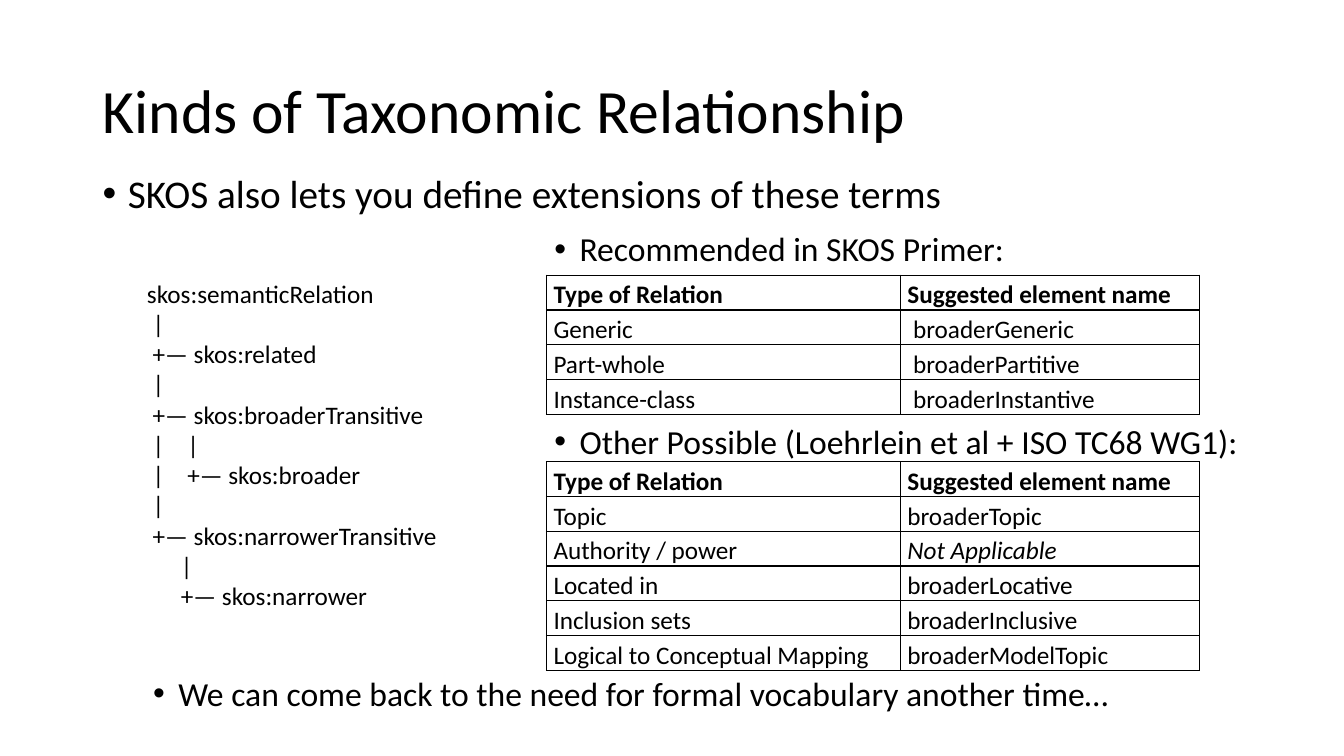
from dataclasses import dataclass
from lxml import etree
from pptx import Presentation, util as u
from pptx.dml.color import RGBColor
from pptx.enum import text as t
from pptx.oxml.ns import qn

PX = 9144
FONT = "Calibri"
COLORS = {"ink": "000000", "paper": "FFFFFF"}
HEAD = ("Type of Relation", "Suggested element name")


@dataclass
class Label:
    text: str
    x: int
    y: int
    w: int
    h: int
    size: int
    left: int = 0
    above: int = 0
    anchor: t.MSO_ANCHOR = t.MSO_ANCHOR.TOP


@dataclass
class Grid:
    y: int
    rows: list[tuple[str, str]]
    slant: str = ""


@dataclass
class Branch:
    text: str
    left: int = 0
    tab: int = 0


LABELS = [
    Label("Kinds of Taxonomic Relationship", 92, 40, 1150, 145, 44,
          anchor=t.MSO_ANCHOR.MIDDLE),
    Label("SKOS also lets you define extensions of these terms",
          92, 168, 901, 145, 28, 25, 10),
    Label("We can come back to the need for formal vocabulary another time…",
          92, 667, 1150, 87, 24, 75, 5),
    Label("Recommended in SKOS Primer:", 490, 226, 699, 47, 24, 75, 5),
    Label("Other Possible (Loehrlein et al + ISO TC68 WG1):",
          490, 417, 778, 47, 24, 75, 5),
]

GRIDS = [
    Grid(273, [
        HEAD,
        ("Generic", " broaderGeneric"),
        ("Part-whole", " broaderPartitive"),
        ("Instance-class", " broaderInstantive"),
    ]),
    Grid(458, [
        HEAD,
        ("Topic", "broaderTopic"),
        ("Authority / power", "Not Applicable"),
        ("Located in", "broaderLocative"),
        ("Inclusion sets", "broaderInclusive"),
        ("Logical to Conceptual Mapping", "broaderModelTopic"),
    ], slant="Not Applicable"),
]

TREE = [
    Branch("skos:semanticRelation"),
    Branch(" |"),
    Branch(" +— skos:related"),
    Branch(" |"),
    Branch(" +— skos:broaderTransitive"),
    Branch(" |\t|", tab=40),
    Branch(" |\t+— skos:broader", tab=40),
    Branch(" |"),
    Branch(" +— skos:narrowerTransitive"),
    Branch(" |", left=28),
    Branch(" +— skos:narrower", left=28),
]


def rgb(key: str) -> RGBColor:
    return RGBColor.from_string(COLORS[key])


def style(para, size: int, bold: bool = False, slant: bool = False) -> None:
    for run in para.runs:
        font = run.font
        font.name, font.size = FONT, u.Pt(size)
        font.bold, font.italic = bold, slant
        font.color.rgb = rgb("ink")


def add_box(slide, x: int, y: int, w: int, h: int, wrap: bool = True):
    box = slide.shapes.add_textbox(x * PX, y * PX, w * PX, h * PX)
    box.text_frame.word_wrap = wrap
    return box.text_frame


def add_label(slide, label: Label) -> None:
    frame = add_box(slide, label.x, label.y, label.w, label.h)
    frame.vertical_anchor = label.anchor
    frame.text = label.text
    para = frame.paragraphs[0]
    para.line_spacing = 0.9
    para.space_before = u.Pt(label.above)
    if label.left:
        props = para._p.get_or_add_pPr()
        props.set("marL", str(label.left * PX))
        props.set("indent", str(-25 * PX))
        etree.SubElement(props, qn("a:buFont"), typeface="Arial")
        etree.SubElement(props, qn("a:buChar"), char="•")
    style(para, label.size)


def add_tree(slide) -> None:
    frame = add_box(slide, 136, 271, 310, 374, wrap=False)
    frame.auto_size = t.MSO_AUTO_SIZE.SHAPE_TO_FIT_TEXT
    frame.text = "\n".join(branch.text for branch in TREE)
    for para, branch in zip(frame.paragraphs, TREE):
        props = para._p.get_or_add_pPr()
        props.set("marL", str(branch.left * PX))
        if branch.tab:
            tabs = etree.SubElement(props, qn("a:tabLst"))
            etree.SubElement(tabs, qn("a:tab"), pos=str(branch.tab * PX), algn="l")
        style(para, 18)


def add_edges(cell) -> None:
    props = cell._tc.get_or_add_tcPr()
    for side in ("lnL", "lnR", "lnT", "lnB"):
        line = etree.SubElement(props, qn(f"a:{side}"), w=str(u.Pt(1)))
        fill = etree.SubElement(line, qn("a:solidFill"))
        etree.SubElement(fill, qn("a:srgbClr"), val=COLORS["ink"])


def add_grid(slide, grid: Grid) -> None:
    count = len(grid.rows)
    high = 32
    table = slide.shapes.add_table(
        count, 2, 542 * PX, grid.y * PX, 648 * PX, count * high * PX).table
    table.first_row = table.horz_banding = False
    for col, wide in zip(table.columns, (351, 297)):
        col.width = wide * PX
    for i, row in enumerate(grid.rows):
        table.rows[i].height = high * PX
        for j, word in enumerate(row):
            cell = table.cell(i, j)
            cell.margin_left = cell.margin_right = 7 * PX
            cell.margin_top = cell.margin_bottom = 0
            add_edges(cell)
            cell.fill.solid()
            cell.fill.fore_color.rgb = rgb("paper")
            cell.text_frame.text = word
            para = cell.text_frame.paragraphs[0]
            para.line_spacing = 1.15
            style(para, 18, bold=i == 0, slant=word == grid.slant)


def main() -> None:
    deck = Presentation()
    deck.slide_width, deck.slide_height = 1333 * PX, 750 * PX
    slide = deck.slides.add_slide(deck.slide_layouts[6])
    add_tree(slide)
    for grid in GRIDS:
        add_grid(slide, grid)
    for label in LABELS:
        add_label(slide, label)
    deck.save("out.pptx")


if __name__ == "__main__":
    main()
